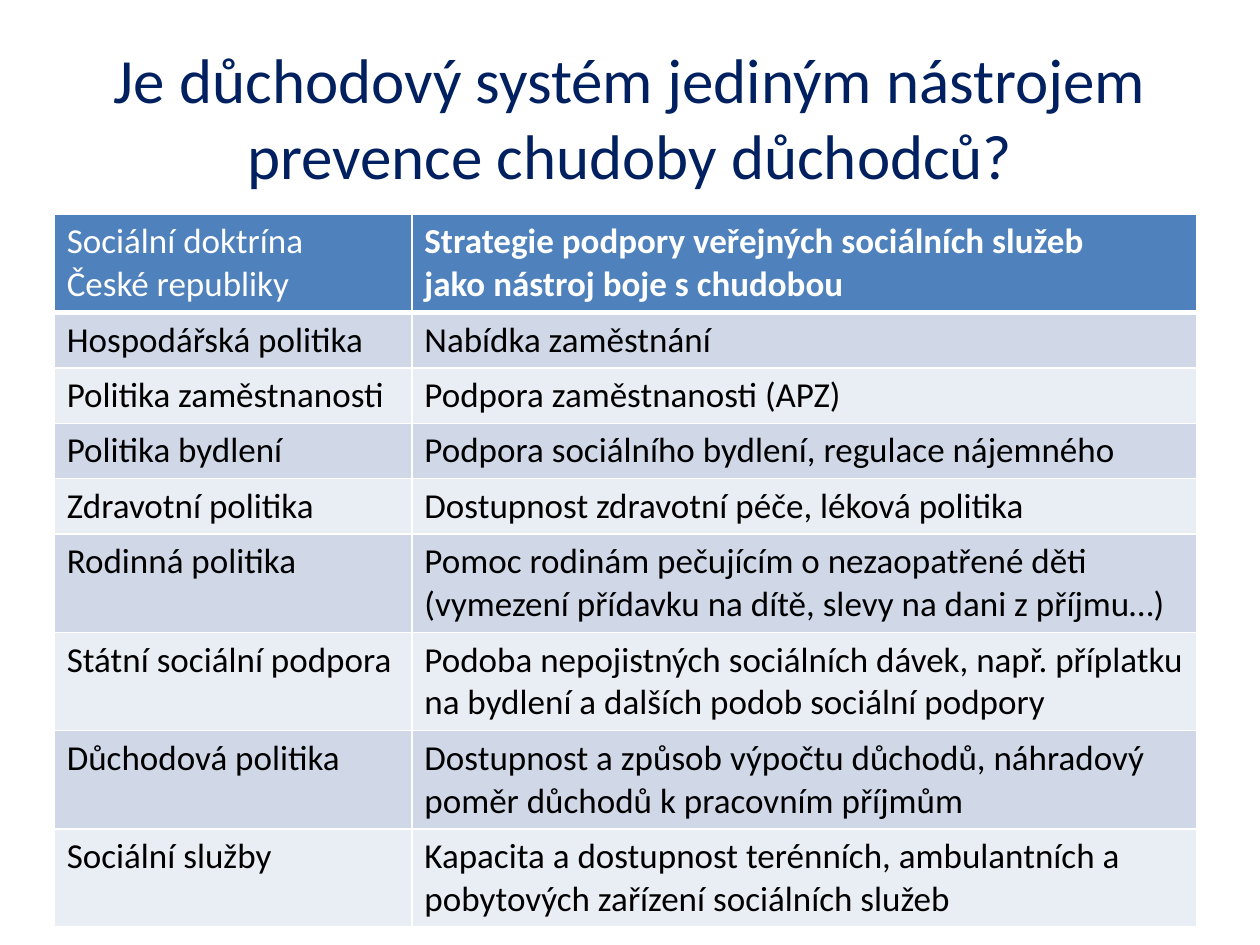
from dataclasses import dataclass

from lxml.etree import SubElement
from pptx import Presentation
from pptx.dml.color import RGBColor
from pptx.enum.text import MSO_ANCHOR as Anchor, PP_ALIGN as Align
from pptx.oxml.ns import qn
from pptx.util import Inches, Pt


@dataclass(frozen=True)
class Theme:
    """Colours, font and type sizes of the slide."""
    font: str = "Calibri"
    title: str = "002060"
    text: str = "000000"
    white: str = "FFFFFF"
    header: str = "4F81BD"
    bands: tuple = ("D0D8E8", "E9EDF4")
    title_size: int = 36
    table_size: int = 20


THEME = Theme()
TITLE = "Je důchodový systém jediným nástrojem prevence chudoby důchodců?"
HEADER = (
    "Sociální doktrína\nČeské republiky",
    "Strategie podpory veřejných sociálních služeb\njako nástroj boje s chudobou",
)
POLICIES = [
    ("Hospodářská politika", "Nabídka zaměstnání"),
    ("Politika zaměstnanosti", "Podpora zaměstnanosti (APZ)"),
    ("Politika bydlení", "Podpora sociálního bydlení, regulace nájemného"),
    ("Zdravotní politika", "Dostupnost zdravotní péče, léková politika"),
    ("Rodinná politika", "Pomoc rodinám pečujícím o nezaopatřené děti "
     "(vymezení přídavku na dítě, slevy na dani z příjmu…)"),
    ("Státní sociální podpora", "Podoba nepojistných sociálních dávek, např. příplatku "
     "na bydlení a dalších podob sociální podpory"),
    ("Důchodová politika", "Dostupnost a způsob výpočtu důchodů, náhradový "
     "poměr důchodů k pracovním příjmům"),
    ("Sociální služby", "Kapacita a dostupnost terénních, ambulantních a "
     "pobytových zařízení sociálních služeb"),
]
COLUMN_SHARES = (0.313, 0.687)
LINE_LIMIT = 50
ONE_LINE, TWO_LINES = Inches(0.44), Inches(0.78)


def write_text(frame, text, *, size, color, bold=False, align=Align.LEFT):
    """Fill a text frame with one formatted paragraph per line of text."""
    for index, line in enumerate(text.split("\n")):
        para = frame.add_paragraph() if index else frame.paragraphs[0]
        para.alignment = align
        span = para.add_run()
        span.text = line
        span.font.name = THEME.font
        span.font.size = Pt(size)
        span.font.bold = bold
        span.font.color.rgb = RGBColor.from_string(color)


def set_borders(cell, color, **widths):
    """Draw the cell's borders, with widths in points by side."""
    properties = cell._tc.get_or_add_tcPr()
    for side, width in widths.items():
        line = SubElement(properties, qn(f"a:ln{side}"), w=str(Pt(width)))
        fill = SubElement(line, qn("a:solidFill"))
        SubElement(fill, qn("a:srgbClr"), val=color)


def add_title(page, left, top, width, height):
    """Place the centred slide title in the given box."""
    box = page.shapes.add_textbox(left, top, width, height)
    box.text_frame.word_wrap = True
    box.text_frame.vertical_anchor = Anchor.MIDDLE
    write_text(box.text_frame, TITLE, size=THEME.title_size,
               color=THEME.title, align=Align.CENTER)


def add_policy_table(page, left, top, width):
    """Place the policy table in the given width, with rows as tall as their text."""
    rows = [HEADER, *POLICIES]
    heights = [TWO_LINES if "\n" in row[1] or len(row[1]) > LINE_LIMIT else ONE_LINE
               for row in rows]
    table = page.shapes.add_table(len(rows), len(HEADER), left, top,
                                  width, sum(heights)).table
    table.first_row = table.horz_banding = False
    for column, share in zip(table.columns, COLUMN_SHARES):
        column.width = int(width * share)
    for r, (row, height) in enumerate(zip(rows, heights)):
        is_header = r == 0
        table.rows[r].height = height
        for c, text in enumerate(row):
            cell = table.cell(r, c)
            write_text(cell.text_frame, text, size=THEME.table_size,
                       color=THEME.white if is_header else THEME.text,
                       bold=is_header and c == 1)
            set_borders(cell, THEME.white, L=1, R=1, T=1, B=3 if is_header else 1)
            cell.fill.solid()
            cell.fill.fore_color.rgb = RGBColor.from_string(
                THEME.header if is_header else THEME.bands[(r - 1) % 2])


def main():
    """Build the deck and save it."""
    deck = Presentation()
    deck.slide_width, deck.slide_height = Inches(10), Inches(7.5)
    page = deck.slides.add_slide(deck.slide_layouts[6])
    add_title(page, Inches(0.5), Inches(0.3), Inches(9), Inches(1.25))
    add_policy_table(page, Inches(0.43), Inches(1.7), Inches(9.07))
    deck.save("out.pptx")


if __name__ == "__main__":
    main()
